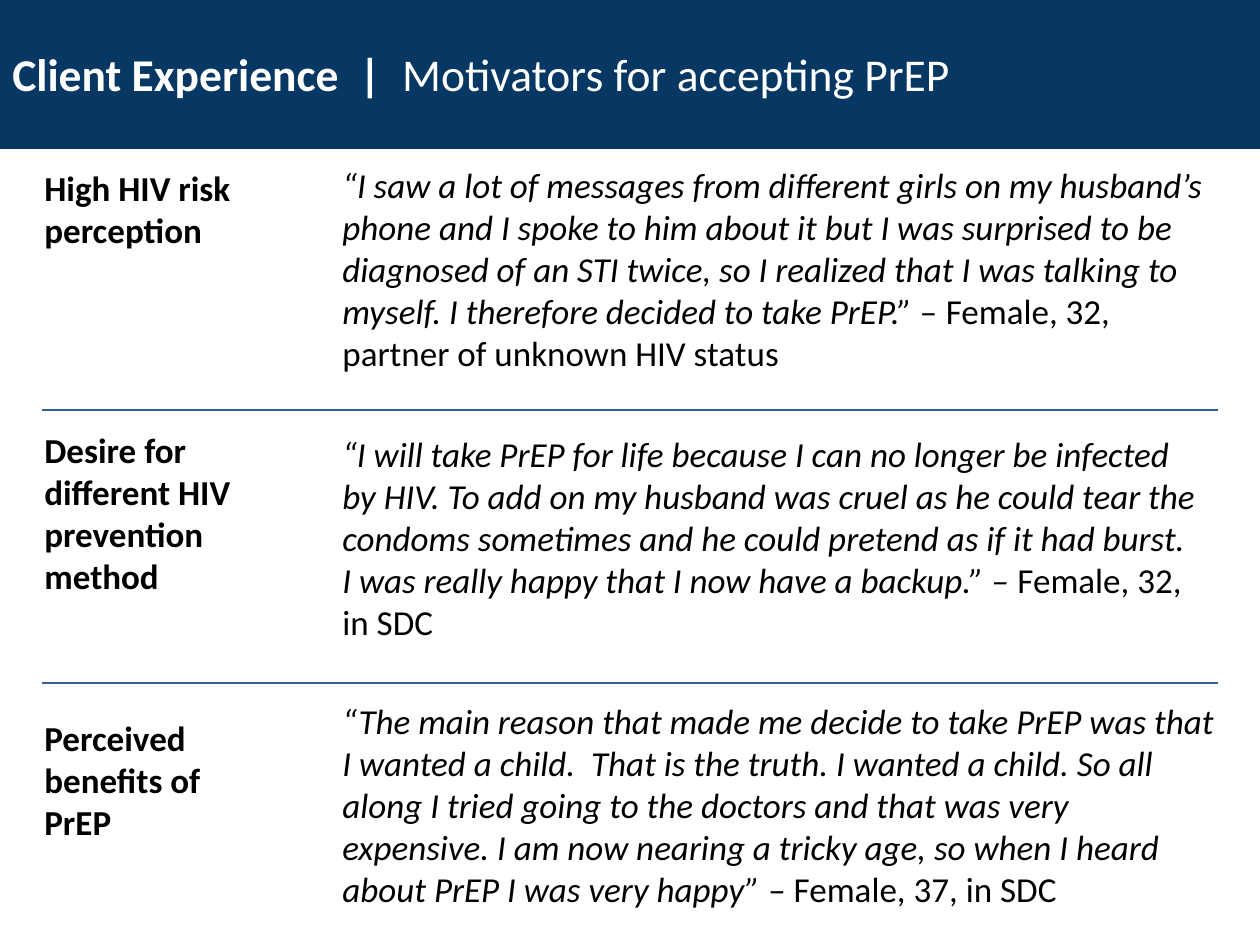
from lxml import etree
from pptx import Presentation
from pptx.dml.color import RGBColor
from pptx.enum.shapes import MSO_CONNECTOR, MSO_SHAPE
from pptx.enum.text import MSO_ANCHOR
from pptx.oxml.ns import qn
from pptx.util import Emu, Pt

RECT = MSO_SHAPE.RECTANGLE
LINE = MSO_CONNECTOR.STRAIGHT
TOP, MIDDLE = MSO_ANCHOR.TOP, MSO_ANCHOR.MIDDLE

HEX = {"navy": "073763", "rule": "376092", "white": "FFFFFF", "black": "000000"}
FONT = "Calibri"
WIDE, HIGH, BAND = 1260, 945, 147
LABEL_X, QUOTE_X, QUOTE_H = 32, 330, 224
RULE_X, RULES = 42, (410, 683)

TITLE = [("Client Experience  |  ", "b"), ("Motivators for accepting PrEP", "")]
ROWS = [
    {
        "label": "High HIV risk perception",
        "label_box": (160, 262, 97),
        "quote": "“I saw a lot of messages from different girls on my husband’s phone "
                 "and I spoke to him about it but I was surprised to be diagnosed of an "
                 "STI twice, so I realized that I was talking to myself. I therefore "
                 "decided to take PrEP.” – ",
        "who": "Female, 32, partner of unknown HIV status",
        "quote_box": (157, 887),
    },
    {
        "label": "Desire for different HIV prevention method",
        "label_box": (422, 262, 183),
        "quote": "“I will take PrEP for life because I can no longer be infected by HIV. "
                 "To add on my husband was cruel as he could tear the condoms sometimes "
                 "and he could pretend as if it had burst. I was really happy that I now "
                 "have a backup.” – ",
        "who": "Female, 32, in SDC",
        "quote_box": (426, 882),
    },
    {
        "label": "Perceived benefits of PrEP",
        "label_box": (710, 242, 140),
        "quote": "“The main reason that made me decide to take PrEP was that I wanted a "
                 "child.  That is the truth. I wanted a child. So all along I tried going "
                 "to the doctors and that was very expensive. I am now nearing a tricky "
                 "age, so when I heard about PrEP I was very happy” ",
        "who": "– Female, 37, in SDC",
        "quote_box": (693, 898),
    },
]


def px(n):
    return Emu(round(n * 914400 / 126))


def tint(name):
    return RGBColor.from_string(HEX[name])


def add_text(slide, runs, box, size=20, color="black", anchor=TOP):
    frame = slide.shapes.add_textbox(*map(px, box)).text_frame
    frame.word_wrap = True
    frame.vertical_anchor = anchor
    para = frame.paragraphs[0]
    for text, style in runs:
        run = para.add_run()
        run.text = text
        font = run.font
        font.name, font.size = FONT, Pt(size)
        font.bold, font.italic = style == "b", style == "i"
        font.color.rgb = tint(color)


def add_band(slide):
    band = slide.shapes.add_shape(RECT, 0, 0, px(WIDE), px(BAND))
    band.shadow.inherit = False
    band.fill.solid()
    band.fill.fore_color.rgb = tint("navy")
    band.line.color.rgb = tint("navy")
    band.line.width = Pt(2)


def add_rule(slide, y):
    rule = slide.shapes.add_connector(LINE, px(RULE_X), px(y), px(WIDE - RULE_X), px(y))
    rule.line.color.rgb = tint("rule")
    rule.line.width = Pt(1.5)
    etree.SubElement(rule._element.spPr, qn("a:effectLst"))


def main():
    deck = Presentation()
    deck.slide_width, deck.slide_height = px(WIDE), px(HIGH)
    slide = deck.slides.add_slide(deck.slide_layouts[6])
    add_band(slide)
    add_text(slide, TITLE, (0, 0, 1250, BAND), size=26, color="white", anchor=MIDDLE)
    for row in ROWS:
        top, wide, high = row["label_box"]
        add_text(slide, [(row["label"], "b")], (LABEL_X, top, wide, high))
        top, wide = row["quote_box"]
        runs = [(row["quote"], "i"), (row["who"], "")]
        add_text(slide, runs, (QUOTE_X, top, wide, QUOTE_H))
    for y in RULES:
        add_rule(slide, y)
    deck.save("out.pptx")


if __name__ == "__main__":
    main()
